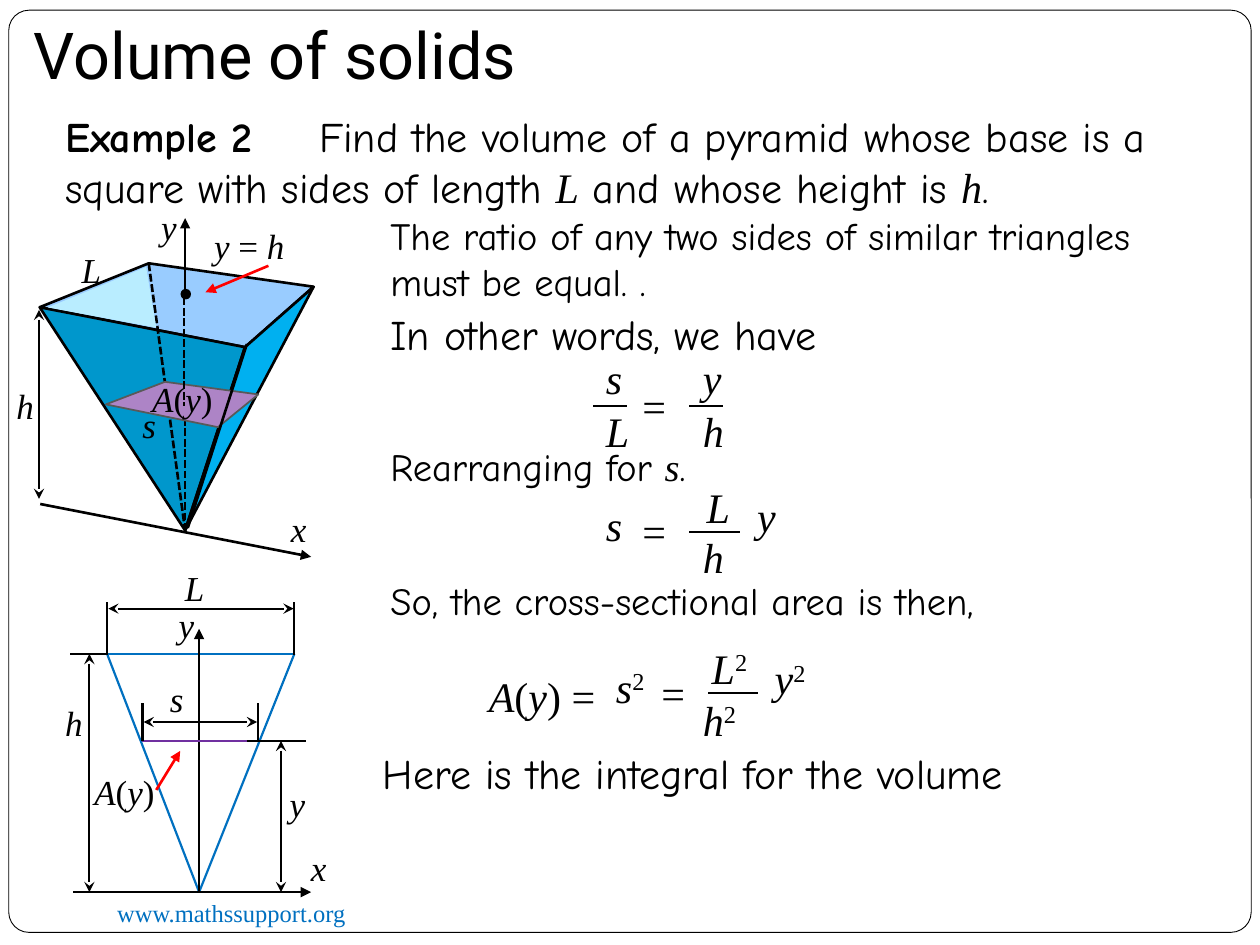
from itertools import groupby

from lxml import etree
from pptx import Presentation
from pptx.dml.color import RGBColor
from pptx.enum.dml import MSO_LINE
from pptx.enum.shapes import MSO_CONNECTOR, MSO_SHAPE
from pptx.enum.text import MSO_ANCHOR, MSO_AUTO_SIZE, PP_ALIGN
from pptx.oxml.ns import qn
from pptx.util import Pt

STRAIGHT = MSO_CONNECTOR.STRAIGHT
ROUND, OVAL = MSO_SHAPE.ROUNDED_RECTANGLE, MSO_SHAPE.OVAL
LEFT, BOTTOM, TOP = PP_ALIGN.LEFT, MSO_ANCHOR.BOTTOM, MSO_ANCHOR.TOP
FIXED, DASHED = MSO_AUTO_SIZE.NONE, MSO_LINE.SQUARE_DOT

BLACK, WHITE = RGBColor(0, 0, 0), RGBColor(255, 255, 255)
RED, BLUE = RGBColor(255, 0, 0), RGBColor(0x00, 0x70, 0xC0)
VIOLET, GREY = RGBColor(0x70, 0x30, 0xA0), RGBColor(0x59, 0x59, 0x59)
LILAC, PALE = RGBColor(0xAD, 0x84, 0xC6), RGBColor(0xB9, 0xED, 0xFF)
SKY, TEAL = RGBColor(0x99, 0xCC, 0xFF), RGBColor(0x00, 0x97, 0xCC)
AZURE = RGBColor(0x00, 0xB0, 0xF0)
SERIF, COMIC, SANS = "Times New Roman", "Comic Neue", "Roboto"

# Text: symbols stand between bars
TITLE = "Volume of solids"
TASK = "Find the volume of a pyramid whose base is a square with sides of length |L| and whose height is |h|."
NOTES = [  # text, size, left, top, width, height
    ("The ratio of any two sides of similar triangles must be equal. .", 22, 216, 117.4, 486, 60.5),
    ("In other words, we have", 24, 216, 172.8, 496, 36),
    ("Rearranging for |s|.", 22, 216, 249.8, 282, 33.8),
    ("So, the cross-sectional area is then,", 22, 216, 326.2, 504, 33.8),
    ("Here is the integral for the volume", 24, 211.7, 423.4, 422, 36),
]
LABELS = [  # symbol, left, top
    ("y", 85, 113.8), ("x", 159.1, 286.6), ("y = h", 115.2, 124.6),
    ("A(y)", 79.9, 212.4), ("s", 74.2, 226.8), ("L", 39.6, 138.2), ("h", 2.2, 216),
    ("x", 170.6, 480.2), ("h", 30.2, 397.4), ("s", 90, 383.8), ("L", 98.6, 320.4),
    ("y", 95, 341.3), ("y", 158.4, 443.5), ("A(y)", 46.8, 437),
]
TERMS = [
    ("s", 339.1, 198), ("L", 339.1, 228.2), ("=", 360, 213.8), ("y", 394.6, 198), ("h", 394.6, 228.2),
    ("s", 339.1, 282.2), ("=", 360, 285.1), ("L", 396.7, 271.4), ("h", 394.6, 300.2), ("y", 425.5, 276.5),
    ("A(y) =", 272.2, 379.4), ("s2", 344.9, 374.4), ("=", 370.8, 378), ("L2", 399.6, 363.6),
    ("h2", 394.6, 393.1), ("y2", 435.6, 369.4),
]
WIDTHS = {1: 21, 2: 38, 4: 63, 5: 63, 6: 85}  # by symbol length

# Pyramid corners
NEAR, BACK, FAR, FRONT, TIP = (22.7, 175.6), (85, 150.5), (179.2, 163.9), (140, 198.4), (105.8, 303.1)
FACES = [
    ((NEAR, BACK, FAR, FRONT), SKY, BLACK, 1.5),
    ((NEAR, TIP, FRONT), TEAL, BLACK, 1.5),
    ((FRONT, TIP, FAR), AZURE, BLACK, 1.5),
]
INNER = [
    (((27.4, 175.7), (83.5, 152.6), (89.3, 187.2)), PALE, None, 0),
    (((60.5, 231.1), (94.3, 218.2), (147.6, 225.4), (124.6, 244.1)), LILAC, GREY, 1),
]

# Line styles: colour, width, dashed, head, tail
EDGE = (BLACK, 1.5, False, None, None)
DASH = (BLACK, 1.5, True, None, None)
AXIS = (BLACK, 1.5, False, None, "triangle")
POINT = (RED, 1.5, False, None, "triangle")
TICK = (BLACK, 1.25, False, None, None)
SPAN = (BLACK, 1.25, False, "stealth", "stealth")
SIDE = (BLUE, 1.25, False, None, None)
SLICE = (VIOLET, 1.5, False, None, None)

BEHIND = [
    (AXIS, [(23, 288, 177.8, 318.2), (105.8, 167.8, 105.8, 124.6)]),
    (DASH, [(*BACK, *TIP), (105.8, 226.8, *TIP)]),
]
# Cross-section triangle
WEST, EAST, MID, RIM, CUT, FLOOR = 61.2, 168.2, 113.8, 373.7, 423.4, 509.8
CUTL, CUTR = 81.4, 147.6
AHEAD = [
    (DASH, [(105.1, 169.9, 105.1, 231.8)]),
    (EDGE, [(141.1, 196.6, 107.3, 301.7)]),
    (SIDE, [(WEST, RIM, EAST, RIM), (WEST, RIM, MID, FLOOR), (EAST, RIM, MID, FLOOR)]),
    (AXIS, [(41.8, FLOOR, 177.8, FLOOR), (MID, FLOOR, MID, 359.3)]),
    (SLICE, [(CUTL, CUT, CUTR, CUT)]),
    (TICK, [(141.1, CUT, 175, CUT), (40.3, RIM, 61.9, RIM)]),
    (TICK, [(x, 401.8, x, CUT) for x in (CUTL, CUTR)]),
    (TICK, [(x, 344.2, x, 374.4) for x in (WEST, EAST)]),
    (SPAN, [(61.9, 347.8, 167.8, 347.8), (51.1, RIM, 51.1, FLOOR), (160.6, CUT, 160.6, FLOOR),
            (82.1, 412.6, 146.9, 412.6), (22.3, 177.1, 22.3, 285.1)]),
    (POINT, [(153.4, 151.9, 117.4, 167), (89.3, 451.4, 103, 429.1)]),
    # Fraction bars
    (TICK, [(x, y, x + w, y) for x, y, w in
            ((339.1, 231.8, 19.4), (393.8, 231.8, 19.4), (393.8, 303.8, 28.8), (404.6, 396, 28.8))]),
]

deck = Presentation()
deck.slide_width, deck.slide_height = Pt(720), Pt(540)
slide = deck.slides.add_slide(deck.slide_layouts[1])
shapes = slide.shapes


def place(shape, *box):
    shape.left, shape.top, shape.width, shape.height = map(Pt, box)


def style(par, size, name, color=BLACK, bold=False):
    par.font.size, par.font.name, par.font.bold = Pt(size), name, bold
    par.font.color.rgb = color


def math(par, text):
    for alpha, part in groupby(text, str.isalpha):
        run = par.add_run()
        run.text = "".join(part)
        run.font.name, run.font.italic = SERIF, alpha
        if run.text.isdigit():
            run._r.get_or_add_rPr().set("baseline", "30000")


def prose(par, text, size):
    for i, part in enumerate(text.split("|")):
        if i % 2:
            math(par, part)
        else:
            run = par.add_run()
            run.text = part
            run.font.name = COMIC
    style(par, size, COMIC)


def box(*area):
    frame = shapes.add_textbox(*map(Pt, area)).text_frame
    frame.word_wrap = True
    return frame.paragraphs[0]


def face(points, fill, edge, width):
    start, *rest = [(Pt(x), Pt(y)) for x, y in points]
    pen = shapes.build_freeform(*start, scale=1.0)
    pen.add_line_segments(rest, close=True)
    paint(pen.convert_to_shape(), fill, edge, width)


def paint(shape, fill, edge, width):
    shape.shadow.inherit = False
    shape.fill.solid()
    shape.fill.fore_color.rgb = fill
    if edge is None:
        shape.line.fill.background()
    else:
        shape.line.color.rgb, shape.line.width = edge, Pt(width)


def rule(look, ends):
    color, width, dashed, head, tail = look
    line = shapes.add_connector(STRAIGHT, *map(Pt, ends))
    line.line.color.rgb, line.line.width = color, Pt(width)
    if dashed:
        line.line.dash_style = DASHED
    for tag, kind in (("a:headEnd", head), ("a:tailEnd", tail)):
        if kind:
            etree.SubElement(line.line._get_or_add_ln(), qn(tag)).set("type", kind)
    etree.SubElement(line._element.spPr, qn("a:effectLst"))


def rules(groups):
    for look, lines in groups:
        for ends in lines:
            rule(look, ends)


# Frame, behind the placeholders
card = shapes.add_shape(ROUND, Pt(5), Pt(5.8), Pt(710), Pt(527))
card.adjustments[0] = 0.022
paint(card, WHITE, BLACK, 0.5)
shapes._spTree.remove(card._element)
shapes._spTree.insert(2, card._element)

# Title and task
title, body = shapes.title, slide.placeholders[1]
place(title, 12.2, 5.8, 594, 54)
place(body, 30.2, 59.8, 659.5, 65.5)
for shape, anchor in ((title, BOTTOM), (body, TOP)):
    frame = shape.text_frame
    frame.word_wrap, frame.auto_size, frame.vertical_anchor = True, FIXED, anchor
title.text_frame.margin_bottom = Pt(7.2)
title.text_frame.text = TITLE
head = title.text_frame.paragraphs[0]
head.alignment = LEFT
style(head, 37, SANS)
task = body.text_frame.paragraphs[0]
props = task._p.get_or_add_pPr()
props.set("marL", "0")
props.set("indent", str(Pt(145)))
etree.SubElement(props, qn("a:buNone"))
task.space_before = Pt(0)
prose(task, TASK, 24)

tag = box(30.2, 59.8, 174, 36)
tag.text = "Example 2"
style(tag, 24, COMIC, bold=True)
site = box(59.8, 509.8, 234, 24.5)
site.text = "www.mathssupport.org"
style(site, 14, SERIF, BLUE)

# Pyramid and triangle
for item in FACES:
    face(*item)
rules(BEHIND)
dot = shapes.add_shape(OVAL, Pt(103.7), Pt(165.6), Pt(5), Pt(5))
paint(dot, BLACK, BLACK, 1)
for item in INNER:
    face(*item)
rules(AHEAD)

# Explanations and symbols
for text, size, *area in NOTES:
    prose(box(*area), text, size)
for group, size, high in ((LABELS, 20, 31.7), (TERMS, 24, 36)):
    for text, x, y in group:
        par = box(x, y, WIDTHS[len(text)], high)
        math(par, text)
        style(par, size, SERIF)

deck.save("out.pptx")
